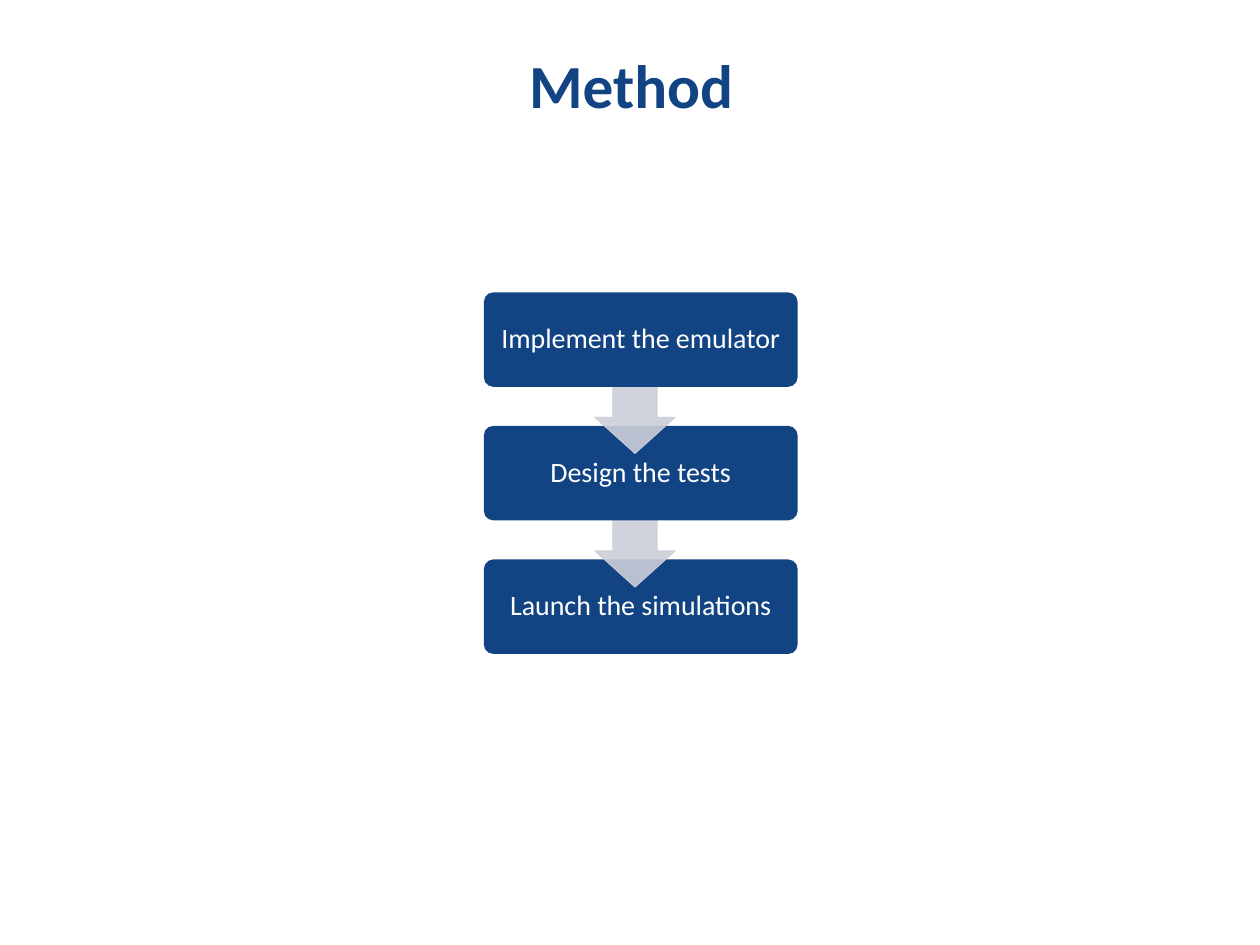
import pptx
import pptx.dml.color
import pptx.enum.shapes
import pptx.enum.text
import pptx.oxml.ns
import pptx.util
from lxml import etree

Inches = pptx.util.Inches
SHAPES = pptx.enum.shapes.MSO_SHAPE

TITLE = "Method"
STEPS = ["Implement the emulator", "Design the tests", "Launch the simulations"]
COLORS = {"navy": "124484", "gray": "CCCFD9", "white": "FFFFFF"}

STEP_LEFT, STEP_TOP, STEP_WIDTH, STEP_HEIGHT = 3.84, 2.32, 2.49, 0.75
STEP_PITCH = 1.06
ARROW_LEFT, ARROW_SIZE, ARROW_RISE = 4.72, 0.64, 0.42
ARROW_OPACITY = 90


def rgb(name):
    return pptx.dml.color.RGBColor.from_string(COLORS[name])


def write(shape, text, size, color, bold=False, margins=(0.1, 0.05)):
    frame = shape.text_frame
    frame.word_wrap = True
    frame.vertical_anchor = pptx.enum.text.MSO_ANCHOR.MIDDLE
    frame.margin_left = frame.margin_right = Inches(margins[0])
    frame.margin_top = frame.margin_bottom = Inches(margins[1])
    paragraph = frame.paragraphs[0]
    paragraph.alignment = pptx.enum.text.PP_ALIGN.CENTER
    paragraph.line_spacing = 0.9
    run = paragraph.add_run()
    run.text = text
    run.font.name = "Calibri"
    run.font.size = pptx.util.Pt(size)
    run.font.bold = bold
    run.font.color.rgb = rgb(color)


def add_filled(slide, preset, box, color, adjustments):
    shape = slide.shapes.add_shape(preset, *map(Inches, box))
    shape.shadow.inherit = False
    shape.fill.solid()
    shape.fill.fore_color.rgb = rgb(color)
    shape.line.fill.background()
    for index, value in enumerate(adjustments):
        shape.adjustments[index] = value
    return shape


def add_arrow(slide, top):
    box = (ARROW_LEFT, top, ARROW_SIZE, ARROW_SIZE)
    arrow = add_filled(slide, SHAPES.DOWN_ARROW, box, "gray", (0.55, 0.45))
    arrow.line.color.rgb = rgb("gray")
    arrow.line.width = pptx.util.Pt(0.5)
    qn = pptx.oxml.ns.qn
    for color in arrow.element.spPr.iter(qn("a:srgbClr")):
        etree.SubElement(color, qn("a:alpha"), val=str(ARROW_OPACITY * 1000))


def main():
    deck = pptx.Presentation()
    deck.slide_width, deck.slide_height = Inches(10), Inches(7.5)
    slide = deck.slides.add_slide(deck.slide_layouts[6])

    title = slide.shapes.add_textbox(Inches(0.51), Inches(0.24), Inches(9), Inches(0.92))
    write(title, TITLE, 35, "navy", bold=True)

    # Last step first, so each arrow lies over the step it points to.
    for index, step in reversed(list(enumerate(STEPS))):
        top = STEP_TOP + index * STEP_PITCH
        box = (STEP_LEFT, top, STEP_WIDTH, STEP_HEIGHT)
        card = add_filled(slide, SHAPES.ROUNDED_RECTANGLE, box, "navy", (0.1,))
        write(card, step, 16, "white", margins=(0.06, 0.07))
        if index > 0:
            add_arrow(slide, top - ARROW_RISE)

    deck.save("out.pptx")


if __name__ == "__main__":
    main()
